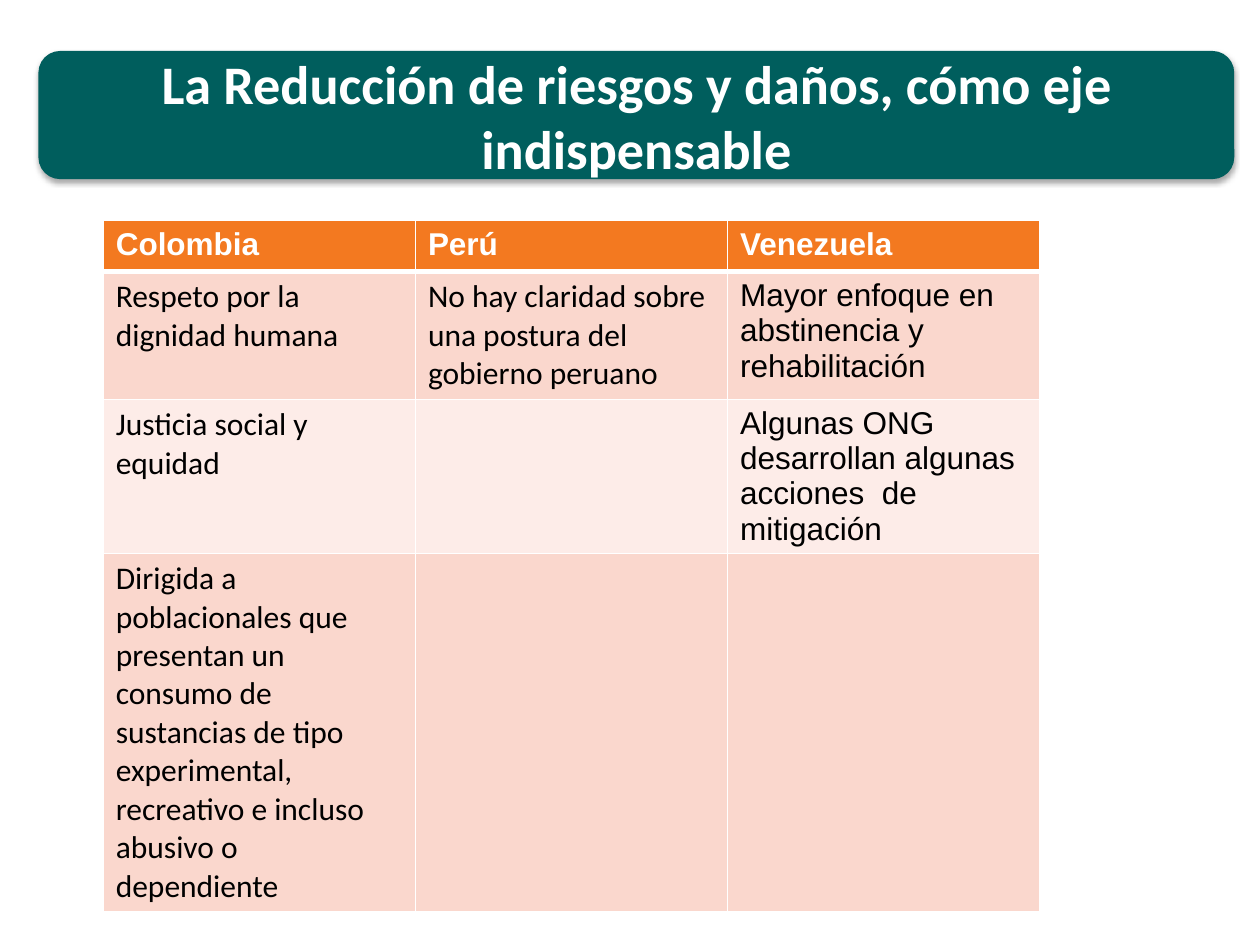
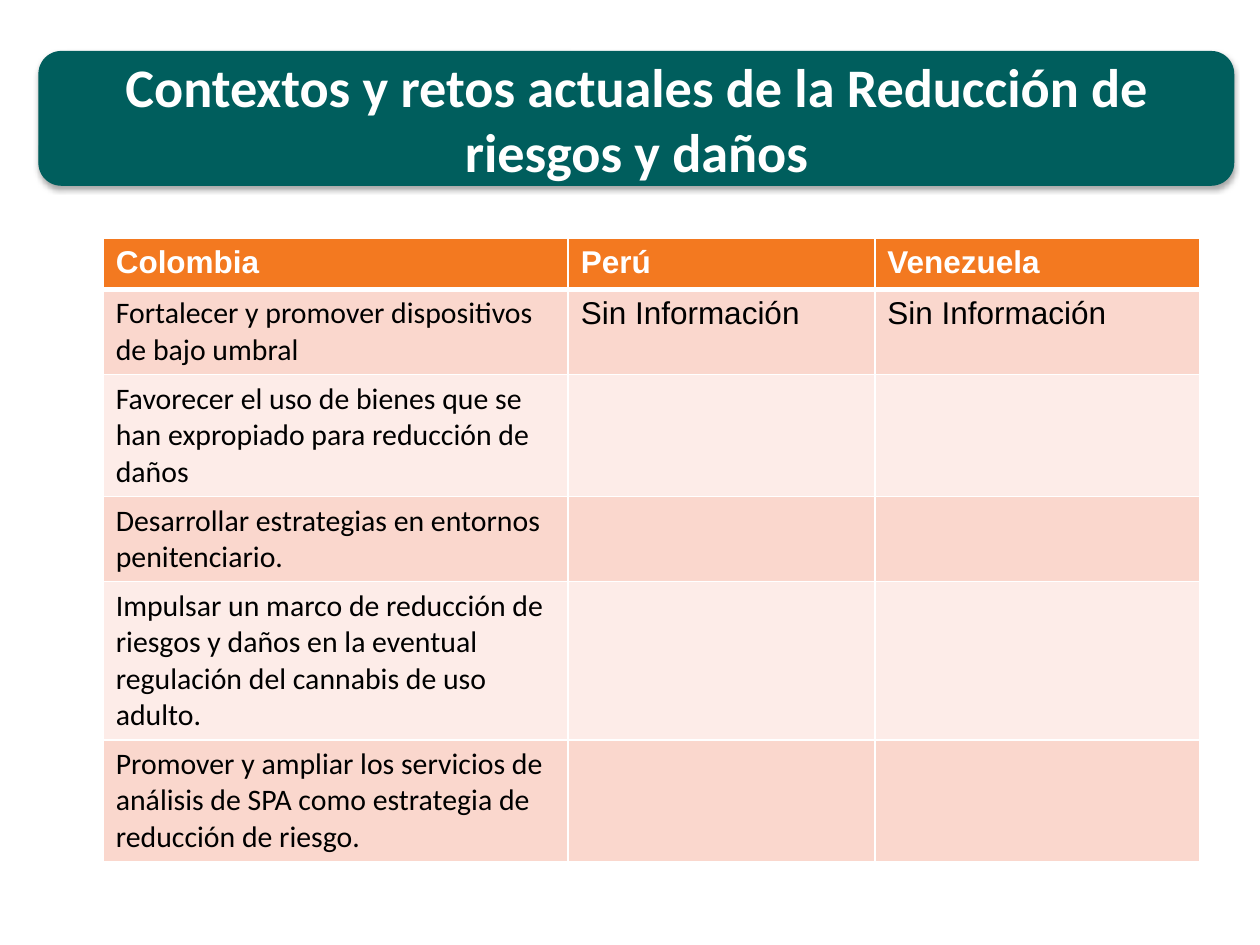
from dataclasses import dataclass

from lxml import etree
from pptx import Presentation
from pptx.dml.color import RGBColor
from pptx.enum.shapes import MSO_SHAPE
from pptx.enum.text import MSO_ANCHOR, PP_ALIGN
from pptx.oxml.ns import qn
from pptx.util import Pt

ROUNDED = MSO_SHAPE.ROUNDED_RECTANGLE
MIDDLE = MSO_ANCHOR.MIDDLE
LEFT, CENTER = PP_ALIGN.LEFT, PP_ALIGN.CENTER


@dataclass(frozen=True)
class Theme:
    teal: str = "005E5D"
    orange: str = "F37920"
    bands: tuple = ("FAD7CD", "FDECE8")
    white: str = "FFFFFF"
    black: str = "000000"
    title_font: str = "Calibri"
    table_font: str = "Arial"
    title_size: int = 31
    table_size: int = 18
    compact_size: int = 17
    band_left: float = 22.3
    band_top: float = 29.5
    band_width: float = 682.6
    table_left: float = 59
    header_height: float = 29.2
    border: int = 1
    header_border: int = 3


THEME = Theme()
CALIBRI = (THEME.title_font, THEME.table_size)
CALIBRI_COMPACT = (THEME.title_font, THEME.compact_size)
ARIAL = (THEME.table_font, THEME.table_size)
COUNTRIES = ("Colombia", "Perú", "Venezuela")


class Deck:
    def __init__(self, theme):
        self.theme = theme
        self.presentation = Presentation()
        self.presentation.slide_width = Pt(720)
        self.presentation.slide_height = Pt(540)
        self.slide = None

    def add_slide(self):
        layout = self.presentation.slide_layouts[6]
        self.slide = self.presentation.slides.add_slide(layout)

    def add_run(self, paragraph, text, font, color, bold=False):
        run = paragraph.add_run()
        run.text = text
        run.font.name, size = font
        run.font.size = Pt(size)
        run.font.bold = bold
        run.font.color.rgb = RGBColor.from_string(color)

    def add_shadow(self, shape):
        shape.shadow.inherit = False
        effects = shape._element.spPr.find(qn("a:effectLst"))
        shadow = etree.SubElement(
            effects, qn("a:outerShdw"), blurRad=str(Pt(3.1)),
            dist=str(Pt(1.8)), dir="5400000", rotWithShape="0")
        color = etree.SubElement(shadow, qn("a:srgbClr"), val=self.theme.black)
        etree.SubElement(color, qn("a:alpha"), val="35000")

    def add_title(self, text, height):
        theme = self.theme
        shape = self.slide.shapes.add_shape(
            ROUNDED, Pt(theme.band_left), Pt(theme.band_top),
            Pt(theme.band_width), Pt(height))
        teal = RGBColor.from_string(theme.teal)
        shape.fill.solid()
        shape.fill.fore_color.rgb = teal
        shape.line.color.rgb = teal
        shape.line.width = Pt(0.75)
        self.add_shadow(shape)
        frame = shape.text_frame
        frame.word_wrap = True
        frame.vertical_anchor = MIDDLE
        paragraph = frame.paragraphs[0]
        paragraph.alignment = CENTER
        self.add_run(paragraph, text, (theme.title_font, theme.title_size),
                     theme.white, bold=True)

    def add_borders(self, cell, row):
        theme = self.theme
        widths = {"a:lnL": theme.border, "a:lnR": theme.border,
                  "a:lnT": theme.header_border if row == 1 else theme.border,
                  "a:lnB": theme.header_border if row == 0 else theme.border}
        properties = cell._tc.get_or_add_tcPr()
        for side, width in widths.items():
            line = etree.SubElement(properties, qn(side), w=str(Pt(width)))
            fill = etree.SubElement(line, qn("a:solidFill"))
            etree.SubElement(fill, qn("a:srgbClr"), val=theme.white)

    def style_cell(self, cell, row, text, font):
        theme = self.theme
        header = row == 0
        self.add_borders(cell, row)
        cell.fill.solid()
        cell.fill.fore_color.rgb = RGBColor.from_string(
            theme.orange if header else theme.bands[(row - 1) % 2])
        paragraph = cell.text_frame.paragraphs[0]
        paragraph.alignment = LEFT
        if text:
            self.add_run(paragraph, text, ARIAL if header else font,
                         theme.white if header else theme.black, bold=header)

    def add_country_table(self, top, column_widths, row_heights, fonts, rows):
        theme = self.theme
        heights = (theme.header_height, *row_heights)
        table = self.slide.shapes.add_table(
            len(heights), len(column_widths), Pt(theme.table_left), Pt(top),
            Pt(sum(column_widths)), Pt(sum(heights))).table
        table.first_row = False
        table.horz_banding = False
        for column, width in zip(table.columns, column_widths):
            column.width = Pt(width)
        for row, (height, texts) in enumerate(zip(heights, (COUNTRIES, *rows))):
            table.rows[row].height = Pt(height)
            for column, (text, font) in enumerate(zip(texts, fonts)):
                self.style_cell(table.cell(row, column), row, text, font)


def add_risk_reduction(deck):
    deck.add_slide()
    deck.add_title("La Reducción de riesgos y daños, cómo eje indispensable", 72.5)
    deck.add_country_table(
        126, (178.4,) * 3, (73.1, 87.7, 204.8), (CALIBRI, CALIBRI, ARIAL),
        (("Respeto por la dignidad humana",
          "No hay claridad sobre una postura del gobierno peruano",
          "Mayor enfoque en abstinencia y rehabilitación"),
         ("Justicia social y equidad", "",
          "Algunas ONG desarrollan algunas acciones  de mitigación"),
         ("Dirigida a poblacionales que presentan un consumo de sustancias "
          "de tipo experimental, recreativo e incluso abusivo o dependiente",
          "", "")))


def add_current_challenges(deck):
    deck.add_slide()
    deck.add_title(
        "Contextos y retos actuales de la Reducción de riesgos y daños", 76.3)
    deck.add_country_table(
        136.1, (265.7, 175.2, 186), (48.7, 69.2, 48.7, 90.2, 69.2),
        (CALIBRI_COMPACT, ARIAL, ARIAL),
        (("Fortalecer y promover dispositivos de bajo umbral",
          "Sin Información", "Sin Información"),
         ("Favorecer el uso de bienes que se han expropiado para "
          "reducción de daños", "", ""),
         ("Desarrollar estrategias en entornos penitenciario.", "", ""),
         ("Impulsar un marco de reducción de riesgos y daños en la eventual "
          "regulación del cannabis de uso adulto.", "", ""),
         ("Promover y ampliar los servicios de análisis de SPA como "
          "estrategia de reducción de riesgo.", "", "")))


def main():
    deck = Deck(THEME)
    add_risk_reduction(deck)
    add_current_challenges(deck)
    deck.presentation.save("out.pptx")


if __name__ == "__main__":
    main()
